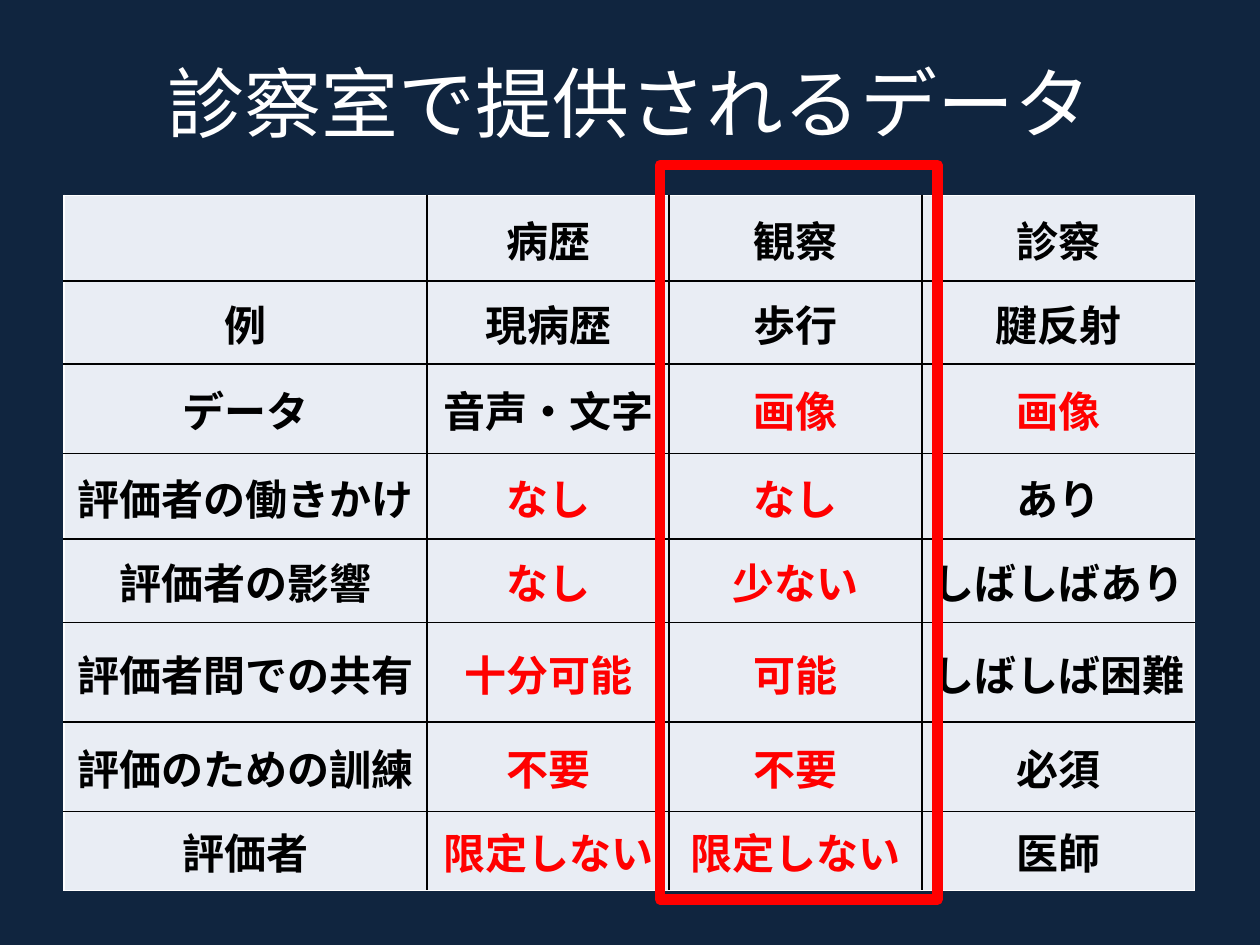
from lxml.etree import SubElement
from pptx import Presentation
from pptx.dml.color import RGBColor
from pptx.enum.shapes import MSO_SHAPE as Shape
from pptx.enum.text import MSO_ANCHOR as Anchor, PP_ALIGN as Align
from pptx.oxml.ns import qn
from pptx.util import Inches, Pt

# Content
TITLE = "診察室で提供されるデータ"
ROWS = [
    ("", "病歴", "観察", "診察"),
    ("例", "現病歴", "歩行", "腱反射"),
    ("データ", "音声・文字", "画像", "画像"),
    ("評価者の働きかけ", "なし", "なし", "あり"),
    ("評価者の影響", "なし", "少ない", "しばしばあり"),
    ("評価者間での共有", "十分可能", "可能", "しばしば困難"),
    ("評価のための訓練", "不要", "不要", "必須"),
    ("評価者", "限定しない", "限定しない", "医師"),
]
RED_WORDS = {"画像", "なし", "少ない", "十分可能", "可能", "不要", "限定しない"}
COLUMN_WIDTHS = (2.88, 1.92, 2.01, 2.16)
ROW_HEIGHTS = (0.68, 0.66, 0.71, 0.68, 0.66, 0.79, 0.71, 0.63)
NAVY, PALE, WHITE, BLACK, RED = "10253F", "E9EDF4", "FFFFFF", "000000", "FF0000"
FONT = "Calibri"


def paint(color_owner, color):
    """Give a fill, which is made solid first, or a font a hex colour."""
    if hasattr(color_owner, "solid"):
        color_owner.solid()
        color_owner.fore_color.rgb = RGBColor.from_string(color)
    else:
        color_owner.color.rgb = RGBColor.from_string(color)


def style_text(paragraph, size, color, bold=False):
    paragraph.alignment = Align.CENTER
    paragraph.font.name = FONT
    paragraph.font.size = Pt(size)
    paragraph.font.bold = bold
    paint(paragraph.font, color)


def add_borders(cell, colors):
    """Draw 1 pt borders; call before filling, as lines precede the fill."""
    properties = cell._tc.get_or_add_tcPr()
    for side, color in colors.items():
        line = SubElement(properties, qn(f"a:ln{side}"), w=str(Pt(1)))
        SubElement(SubElement(line, qn("a:solidFill")), qn("a:srgbClr"), val=color)


prs = Presentation()
prs.slide_width, prs.slide_height = Inches(10), Inches(7.5)
slide = prs.slides.add_slide(prs.slide_layouts[5])
paint(slide.background.fill, NAVY)

# Title
title = slide.shapes.title
title.left, title.top, title.width, title.height = map(Inches, (0.5, 0.3, 9, 1.01))
title.text_frame.text = TITLE
title.text_frame.vertical_anchor = Anchor.MIDDLE
style_text(title.text_frame.paragraphs[0], 44, WHITE)

# Comparison table: white outer edge, black inner lines
table = slide.shapes.add_table(
    len(ROWS), len(COLUMN_WIDTHS), Inches(0.51), Inches(1.55),
    Inches(sum(COLUMN_WIDTHS)), Inches(sum(ROW_HEIGHTS))).table
for column, width in zip(table.columns, COLUMN_WIDTHS):
    column.width = Inches(width)
last_row, last_column = len(ROWS) - 1, len(COLUMN_WIDTHS) - 1
for r, words in enumerate(ROWS):
    table.rows[r].height = Inches(ROW_HEIGHTS[r])
    for c, word in enumerate(words):
        cell = table.cell(r, c)
        at_edge = {"L": c == 0, "R": c == last_column, "T": r == 0, "B": r == last_row}
        add_borders(cell, {side: WHITE if edge else BLACK for side, edge in at_edge.items()})
        paint(cell.fill, PALE)
        cell.vertical_anchor = Anchor.MIDDLE
        cell.margin_left = cell.margin_right = cell.margin_top = Inches(0.01)
        cell.margin_bottom = 0
        cell.text = word
        style_text(cell.text_frame.paragraphs[0], 24, RED if word in RED_WORDS else BLACK, True)

# Red frame around the observation column
frame = slide.shapes.add_shape(
    Shape.RECTANGLE, Inches(5.24), Inches(1.31), Inches(2.2), Inches(5.83))
frame.shadow.inherit = False
frame.fill.background()
paint(frame.line.fill, RED)
frame.line.width = Pt(6)

prs.save("out.pptx")
